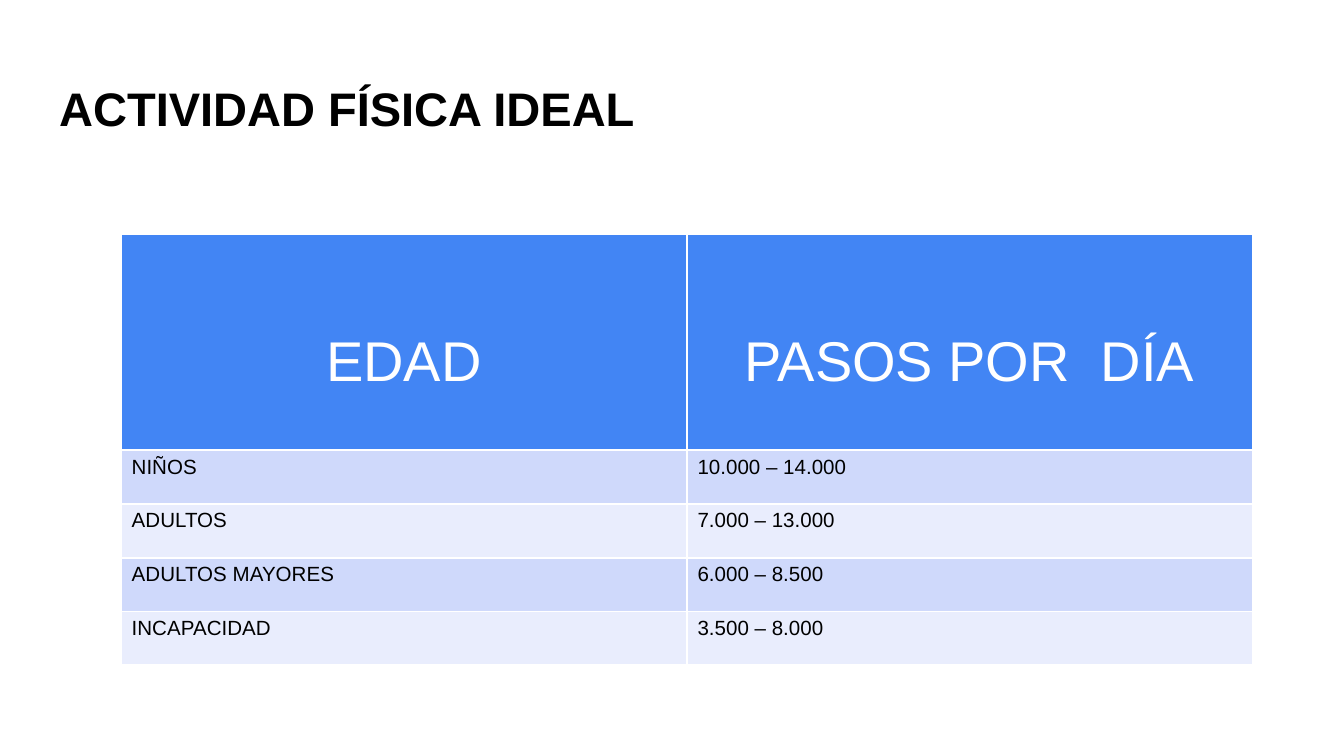
from pptx import Presentation
from pptx.dml.color import RGBColor
from pptx.enum.text import MSO_ANCHOR, PP_ALIGN
from pptx.util import Inches, Pt

LEFT, CENTER = PP_ALIGN.LEFT, PP_ALIGN.CENTER
TOP = MSO_ANCHOR.TOP

BLACK = RGBColor(0x00, 0x00, 0x00)
WHITE = RGBColor(0xFF, 0xFF, 0xFF)
BLUE = RGBColor(0x42, 0x85, 0xF4)
BAND_COLORS = (RGBColor(0xCF, 0xD9, 0xFB), RGBColor(0xE9, 0xED, 0xFD))

TITLE_FONT = {"name": "Arial", "size": Pt(25.2), "bold": True}
HEADER_FONT = {"name": "Arial", "size": Pt(30), "bold": False}
BODY_FONT = {"name": "Arial", "size": Pt(11), "bold": False}

SLIDE_WIDTH = Inches(10)
SLIDE_HEIGHT = SLIDE_WIDTH * 9 // 16
HEADER_HEIGHT = Inches(1.61)
ROW_HEIGHT = Inches(0.4)
HEADER_MARGIN = Inches(0.72)
BODY_MARGIN = Inches(0.04)

ROWS = [
    ("EDAD", "PASOS POR  DÍA"),
    ("NIÑOS", "10.000 – 14.000"),
    ("ADULTOS", "7.000 – 13.000"),
    ("ADULTOS MAYORES", "6.000 – 8.500"),
    ("INCAPACIDAD", "3.500 – 8.000"),
]


def set_attributes(target, values):
    for name, value in values.items():
        setattr(target, name, value)


def write_text(text_frame, text, font_values, color, alignment):
    text_frame.text = text
    paragraph = text_frame.paragraphs[0]
    paragraph.alignment = alignment
    font = paragraph.runs[0].font
    set_attributes(font, font_values)
    font.color.rgb = color


def add_title(slide, text):
    title = slide.shapes.title
    set_attributes(title, {
        "left": Inches(0.34), "top": Inches(0.49),
        "width": Inches(9.32), "height": Inches(0.63),
    })
    margins = ("margin_left", "margin_top", "margin_right", "margin_bottom")
    set_attributes(title.text_frame, dict.fromkeys(margins, Inches(0.1)))
    title.text_frame.vertical_anchor = TOP
    write_text(title.text_frame, text, TITLE_FONT, BLACK, LEFT)


def format_cell(cell, text, row_index):
    is_header = row_index == 0
    cell.fill.solid()
    cell.fill.fore_color.rgb = BLUE if is_header else BAND_COLORS[(row_index - 1) % 2]
    set_attributes(cell, {
        "margin_left": Inches(0.08), "margin_right": Inches(0.08),
        "margin_top": HEADER_MARGIN if is_header else BODY_MARGIN,
        "margin_bottom": BODY_MARGIN, "vertical_anchor": TOP,
    })
    if is_header:
        write_text(cell.text_frame, text, HEADER_FONT, WHITE, CENTER)
    else:
        write_text(cell.text_frame, text, BODY_FONT, BLACK, LEFT)


def add_steps_table(slide, rows):
    height = HEADER_HEIGHT + ROW_HEIGHT * (len(rows) - 1)
    table = slide.shapes.add_table(
        len(rows), len(rows[0]), Inches(0.9), Inches(1.74), Inches(8.42), height
    ).table
    for row_index, texts in enumerate(rows):
        table.rows[row_index].height = ROW_HEIGHT if row_index else HEADER_HEIGHT
        for column_index, text in enumerate(texts):
            format_cell(table.cell(row_index, column_index), text, row_index)


def main():
    presentation = Presentation()
    presentation.slide_width = SLIDE_WIDTH
    presentation.slide_height = SLIDE_HEIGHT
    slide = presentation.slides.add_slide(presentation.slide_layouts[5])
    add_title(slide, "ACTIVIDAD FÍSICA IDEAL")
    add_steps_table(slide, ROWS)
    presentation.save("out.pptx")


if __name__ == "__main__":
    main()
